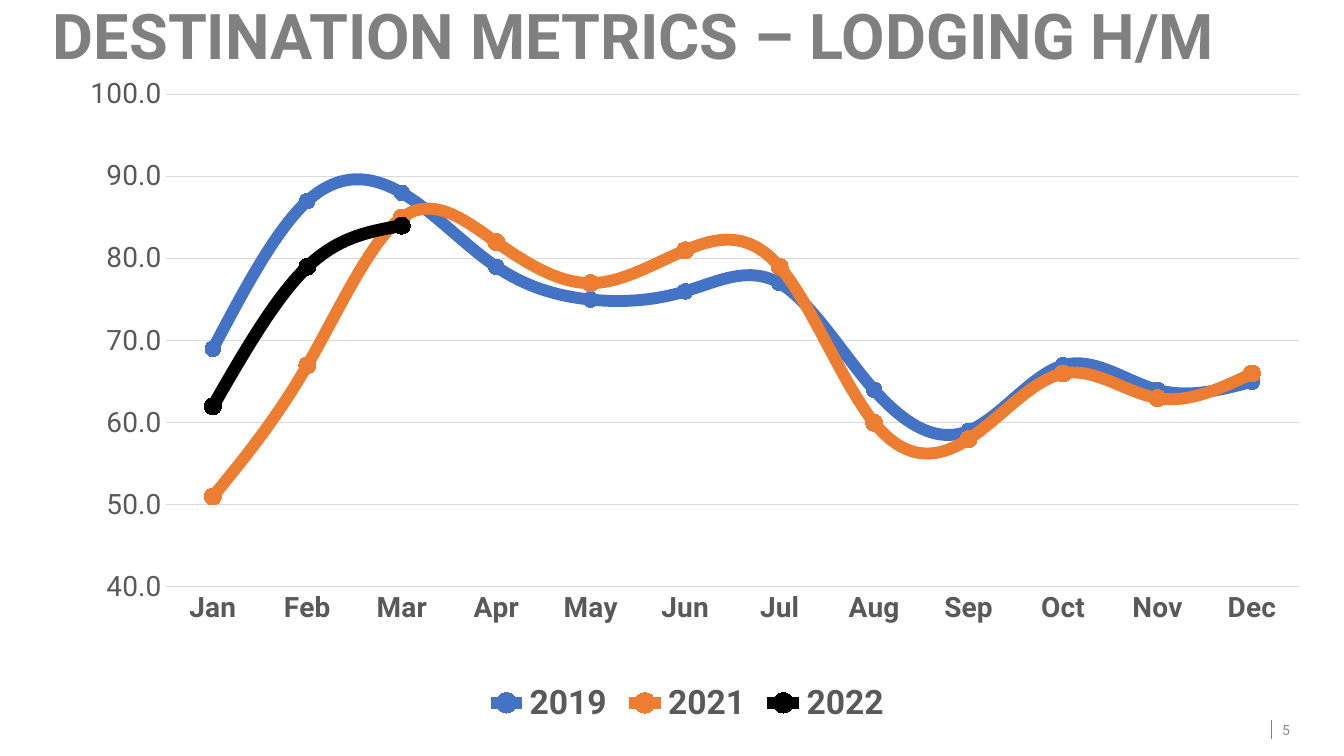
from lxml import etree
from pptx import Presentation
from pptx.chart.data import CategoryChartData
from pptx.dml.color import RGBColor
from pptx.enum.chart import XL_CHART_TYPE, XL_LEGEND_POSITION, XL_MARKER_STYLE, XL_TICK_MARK
from pptx.enum.shapes import MSO_CONNECTOR
from pptx.enum.text import MSO_ANCHOR, PP_ALIGN
from pptx.oxml.ns import qn
from pptx.util import Pt

PX = 9525  # EMU in one px, 96 px to the inch
FONT = "Roboto"
LINE_MARKERS = XL_CHART_TYPE.LINE_MARKERS
LEGEND_BOTTOM = XL_LEGEND_POSITION.BOTTOM
CIRCLE = XL_MARKER_STYLE.CIRCLE
NO_TICK = XL_TICK_MARK.NONE
STRAIGHT = MSO_CONNECTOR.STRAIGHT
MIDDLE = MSO_ANCHOR.MIDDLE
LEFT, RIGHT = PP_ALIGN.LEFT, PP_ALIGN.RIGHT

BLACK = RGBColor(0x00, 0x00, 0x00)
GRAY = RGBColor(0x80, 0x80, 0x80)
PAGE_GRAY = RGBColor(0x8C, 0x8C, 0x8C)
LABEL_GRAY = RGBColor(0x59, 0x59, 0x59)
GRID_GRAY = RGBColor(0xD9, 0xD9, 0xD9)
BLUE = RGBColor(0x44, 0x72, 0xC4)
ORANGE = RGBColor(0xED, 0x7D, 0x31)

MONTHS = "Jan Feb Mar Apr May Jun Jul Aug Sep Oct Nov Dec".split()
# year, monthly values, colour, line width, marker size
YEARS = [
    ("2019", [69, 87, 88, 79, 75, 76, 77, 64, 59, 67, 64, 65], BLUE, 8.5, 11),
    ("2021", [51, 67, 85, 82, 77, 81, 79, 60, 58, 66, 63, 66], ORANGE, 8.5, 12),
    ("2022", [62, 79, 84] + [None] * 9, BLACK, 9, 12),
]
PLOT_AREA = {"x": 0.085, "y": 0.038, "w": 0.902, "h": 0.746}


def to_emu(*lengths):
    return [length * PX for length in lengths]


def format_font(font, size, color, bold=False):
    values = {"name": FONT, "size": Pt(size), "bold": bold}
    for name, value in values.items():
        setattr(font, name, value)
    font.color.rgb = color


def format_line(line, color, width):
    line.color.rgb = color
    line.width = Pt(width)


def add_text(slide, box, text, size, color, bold=False, alignment=LEFT, spacing=1.0):
    frame = slide.shapes.add_textbox(*to_emu(*box)).text_frame
    frame.word_wrap = True
    frame.vertical_anchor = MIDDLE
    paragraph = frame.paragraphs[0]
    paragraph.text = text
    paragraph.alignment = alignment
    paragraph.line_spacing = spacing
    format_font(paragraph.runs[0].font, size, color, bold)


def add_page_number(slide, box, number):
    left, top, width, height = box
    add_text(slide, box, number, 10, PAGE_GRAY, alignment=RIGHT)
    # Divider to the left of the number
    x = left + width - 27
    divider = slide.shapes.add_connector(
        STRAIGHT, *to_emu(x, top + 10, x, top + height - 10))
    format_line(divider.line, GRAY, 0.5)
    etree.SubElement(divider._element.spPr, qn("a:effectLst"))


def set_plot_area(chart):
    plot_area = chart._chartSpace.chart.plotArea
    for old_layout in plot_area.findall(qn("c:layout")):
        plot_area.remove(old_layout)
    layout = etree.Element(qn("c:layout"))
    plot_area.insert(0, layout)
    manual = etree.SubElement(layout, qn("c:manualLayout"))
    settings = {"layoutTarget": "inner", "xMode": "edge", "yMode": "edge", **PLOT_AREA}
    for name, value in settings.items():
        etree.SubElement(manual, qn(f"c:{name}")).set("val", str(value))


def format_axes(chart):
    months, occupancy = chart.category_axis, chart.value_axis
    for axis, bold in ((months, True), (occupancy, False)):
        axis.major_tick_mark = axis.minor_tick_mark = NO_TICK
        format_font(axis.tick_labels.font, 20, LABEL_GRAY, bold)
    format_line(months.format.line, GRID_GRAY, 0.75)

    scale = {"minimum_scale": 40, "maximum_scale": 100, "major_unit": 10,
             "has_major_gridlines": True}
    for name, value in scale.items():
        setattr(occupancy, name, value)
    occupancy.format.line.fill.background()
    format_line(occupancy.major_gridlines.format.line, GRID_GRAY, 0.75)
    occupancy.tick_labels.number_format = "0.0"
    occupancy.tick_labels.number_format_is_linked = False


def add_lodging_chart(slide, box):
    data = CategoryChartData(number_format="0.0")
    data.categories = MONTHS
    for year, values, *_ in YEARS:
        data.add_series(year, values)
    chart = slide.shapes.add_chart(LINE_MARKERS, *to_emu(*box), data).chart
    chart.has_title = False
    format_font(chart.font, 10, BLACK)
    chart.plots[0].vary_by_categories = False
    set_plot_area(chart)
    format_axes(chart)

    # One smooth line for each year
    for series, (_, _, color, width, marker_size) in zip(chart.plots[0].series, YEARS):
        series.smooth = True
        format_line(series.format.line, color, width)
        marker = series.marker
        marker.style = CIRCLE
        marker.size = marker_size
        marker.format.fill.solid()
        marker.format.fill.fore_color.rgb = color
        format_line(marker.format.line, color, 0.75)

    # Legend
    chart.has_legend = True
    chart.legend.position = LEGEND_BOTTOM
    chart.legend.include_in_layout = False
    format_font(chart.legend.font, 24, LABEL_GRAY, bold=True)


def main():
    presentation = Presentation()
    presentation.slide_width, presentation.slide_height = to_emu(1280, 720)
    slide = presentation.slides.add_slide(presentation.slide_layouts[6])
    add_page_number(slide, (950, 676, 288, 38), "5")
    add_text(slide, (41, -13, 1197, 100), "DESTINATION METRICS – LODGING H/M",
             45, GRAY, bold=True, spacing=0.9)
    add_lodging_chart(slide, (56, 66, 1197, 629))
    presentation.save("out.pptx")


if __name__ == "__main__":
    main()
